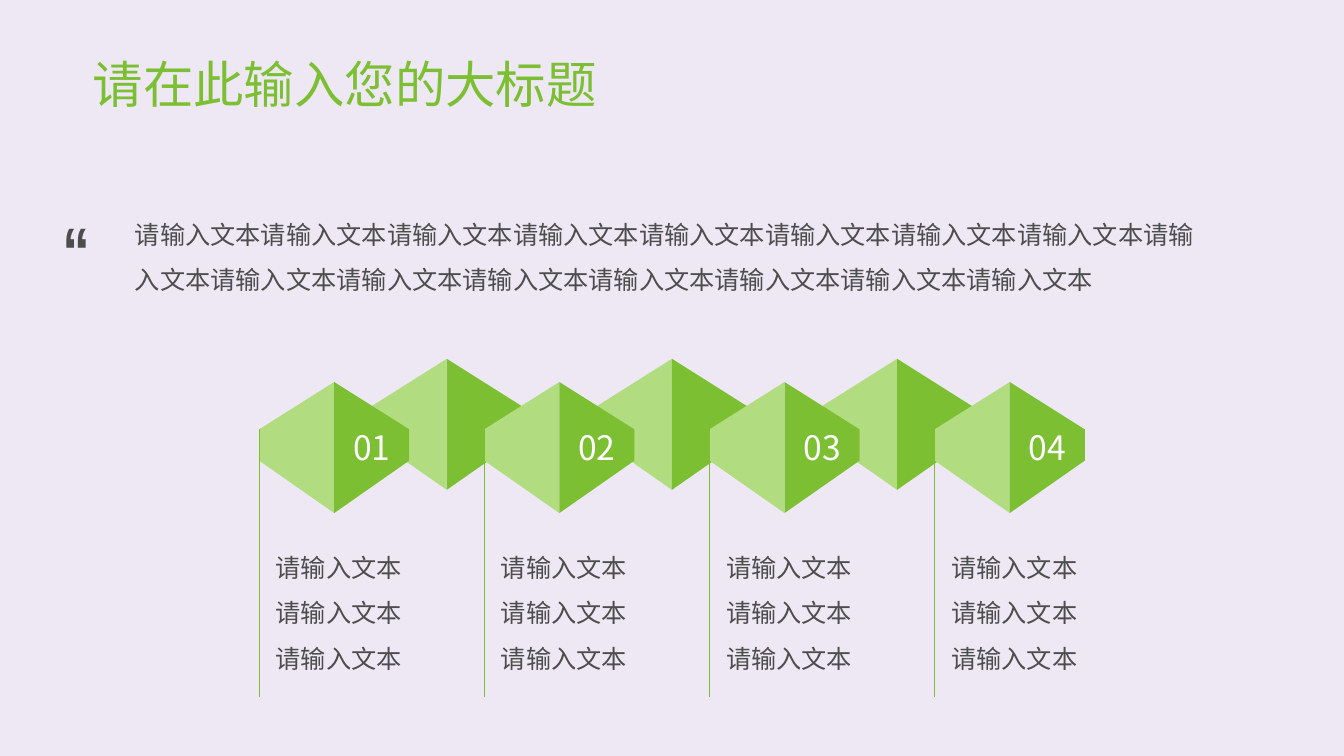
"""Build a slide with a zigzag band of folded hexagons over four numbered columns."""
from dataclasses import dataclass

import pptx
import pptx.dml.color
import pptx.enum.shapes
import pptx.enum.text
import pptx.oxml
import pptx.oxml.ns
import pptx.util

Inches = pptx.util.Inches
PP_ALIGN = pptx.enum.text.PP_ALIGN
ANCHOR = pptx.enum.text.MSO_ANCHOR

COLORS = {
    "background": "EEE8F4",
    "green": "7CBF33",
    "light_green": "B1DD80",
    "text": "4D4D4D",
    "white": "FFFFFF",
}
CJK_FONT = "Noto Sans CJK SC"
SAMPLE = "请输入文本"

COLUMN_LEFT = 2.57
COLUMN_PITCH = 6.7 / 3
COLUMN_COUNT = 4
HALF_WIDTH = COLUMN_PITCH / 3
FRONT_TOP = 3.79
BACK_TOP = 3.56
SHOULDER_TOP = 0.47
SHOULDER_BOTTOM = 0.78
HEXAGON_HEIGHT = 1.3


@dataclass(frozen=True)
class Style:
    size: float
    color: str = "text"
    font: str = CJK_FONT
    bold: bool = False
    align: PP_ALIGN = PP_ALIGN.LEFT
    spacing: float = 1.0


@dataclass(frozen=True)
class Label:
    text: str
    left: float
    top: float
    width: float
    height: float
    style: Style
    anchor: ANCHOR = ANCHOR.MIDDLE


@dataclass(frozen=True)
class Hexagon:
    left: float
    top: float
    number: str = ""


NUMBER_STYLE = Style(24, "white", align=PP_ALIGN.CENTER)
COLUMN_STYLE = Style(18, align=PP_ALIGN.CENTER, spacing=1.5)

COLUMN_LEFTS = [COLUMN_LEFT + COLUMN_PITCH * index for index in range(COLUMN_COUNT)]
BACK_HEXAGONS = [Hexagon(left + COLUMN_PITCH / 2, BACK_TOP) for left in COLUMN_LEFTS[:-1]]
FRONT_HEXAGONS = [
    Hexagon(left, FRONT_TOP, f"{number:02d}") for number, left in enumerate(COLUMN_LEFTS, 1)
]
LABELS = [
    Label("请在此输入您的大标题", 0.82, 0.4, 11.31, 0.93, Style(36, "green", spacing=0.9)),
    Label(SAMPLE * 16, 1.24, 1.81, 10.85, 1.33, Style(18, spacing=1.5)),
    Label("“", 0.52, 2.02, 0.7, 0.91, Style(48, font="Arial Narrow", bold=True), ANCHOR.TOP),
]


def rgb(name: str) -> pptx.dml.color.RGBColor:
    """Return the named palette colour."""
    return pptx.dml.color.RGBColor.from_string(COLORS[name])


def write_text(frame: pptx.text.text.TextFrame, text: str, style: Style, anchor: ANCHOR) -> None:
    """Put one styled paragraph into a text frame."""
    frame.text = text
    frame.word_wrap = True
    frame.vertical_anchor = anchor
    para = frame.paragraphs[0]
    para.alignment = style.align
    para.line_spacing = style.spacing
    span = para.runs[0]
    span.font.size = pptx.util.Pt(style.size)
    span.font.bold = style.bold
    span.font.color.rgb = rgb(style.color)
    span.font.name = style.font
    east_asian = pptx.oxml.ns.qn("a:ea")
    span.font._element.get_or_add_latin().addnext(
        span.font._element.makeelement(east_asian, {"typeface": style.font})
    )


def add_label(page: pptx.slide.Slide, label: Label) -> None:
    """Add a text box."""
    box = page.shapes.add_textbox(
        Inches(label.left), Inches(label.top), Inches(label.width), Inches(label.height)
    )
    write_text(box.text_frame, label.text, label.style, label.anchor)


def add_half(
    page: pptx.slide.Slide, outer: float, center: float, top: float, color: str
) -> pptx.shapes.autoshape.Shape:
    """Add one side of a folded hexagon."""
    builder = page.shapes.build_freeform(Inches(outer), Inches(top + SHOULDER_TOP))
    corners = [(outer, SHOULDER_BOTTOM), (center, HEXAGON_HEIGHT), (center, 0)]
    builder.add_line_segments([(Inches(x), Inches(top + drop)) for x, drop in corners])
    half = builder.convert_to_shape()
    half.shadow.inherit = False
    half.fill.solid()
    half.fill.fore_color.rgb = rgb(color)
    half.line.fill.background()
    return half


def add_hexagon(page: pptx.slide.Slide, hexagon: Hexagon) -> None:
    """Add a folded hexagon with its number, if any, on the dark side."""
    center = hexagon.left + HALF_WIDTH
    add_half(page, hexagon.left, center, hexagon.top, "light_green")
    dark = add_half(page, center + HALF_WIDTH, center, hexagon.top, "green")
    if hexagon.number:
        frame = dark.text_frame
        frame.margin_left = frame.margin_right = Inches(0.07)
        frame.margin_top = frame.margin_bottom = Inches(0.04)
        write_text(frame, hexagon.number, NUMBER_STYLE, ANCHOR.MIDDLE)


def add_column(page: pptx.slide.Slide, left: float) -> None:
    """Add the vertical rule and the text of one column."""
    rule = page.shapes.add_connector(
        pptx.enum.shapes.MSO_CONNECTOR.STRAIGHT,
        Inches(left), Inches(4.26), Inches(left), Inches(6.91),
    )
    rule.line.color.rgb = rgb("green")
    rule.line.width = pptx.util.Pt(0.5)
    properties = rule._element.spPr
    properties.append(properties.makeelement(pptx.oxml.ns.qn("a:effectLst"), {}))
    add_label(page, Label(SAMPLE * 3, left + 0.01, 5.31, 1.56, 1.39, COLUMN_STYLE))


def main() -> None:
    """Build and save the deck."""
    deck = pptx.Presentation()
    deck.slide_width, deck.slide_height = Inches(13.33), Inches(7.5)
    page = deck.slides.add_slide(deck.slide_layouts[6])
    page.background.fill.solid()
    page.background.fill.fore_color.rgb = rgb("background")
    for hexagon in BACK_HEXAGONS + FRONT_HEXAGONS:
        add_hexagon(page, hexagon)
    for left in COLUMN_LEFTS:
        add_column(page, left)
    for label in LABELS:
        add_label(page, label)
    deck.save("out.pptx")


if __name__ == "__main__":
    main()
